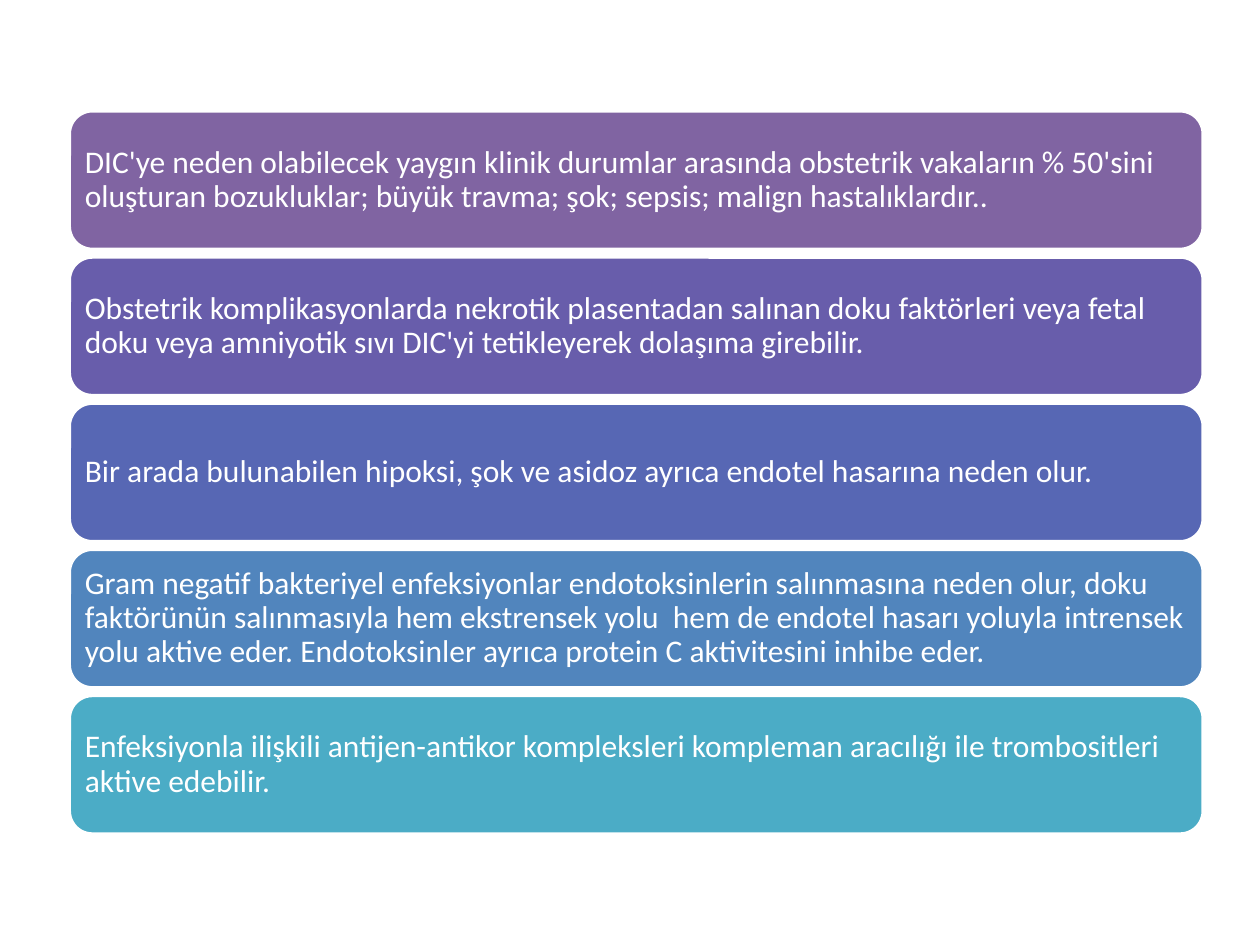
from dataclasses import dataclass

from pptx import Presentation
from pptx.dml.color import RGBColor
from pptx.enum.shapes import MSO_SHAPE
from pptx.enum.text import MSO_ANCHOR, PP_ALIGN
from pptx.util import Inches, Pt


@dataclass(frozen=True)
class Theme:
    font: str = "Calibri"
    text_size: float = 18
    space_after: float = 6.3
    line_spacing: float = 0.9
    outline_width: float = 2
    white: str = "FFFFFF"
    bars: tuple = ("8064A2", "685DAB", "5767B4", "5185BD", "4BACC6")


THEME = Theme()

BAR_LEFT, BAR_TOP = 0.55, 0.88
BAR_WIDTH, BAR_HEIGHT = 9, 1.1
BAR_PITCH = 1.16
BAR_INSET = 0.07

STATEMENTS = (
    "DIC'ye neden olabilecek yaygın klinik durumlar arasında obstetrik vakaların "
    "% 50'sini oluşturan bozukluklar; büyük travma; şok; sepsis; malign hastalıklardır..",
    "Obstetrik komplikasyonlarda nekrotik plasentadan salınan doku faktörleri veya "
    "fetal doku veya amniyotik sıvı DIC'yi tetikleyerek dolaşıma girebilir.",
    "Bir arada bulunabilen hipoksi, şok ve asidoz ayrıca endotel hasarına neden olur.",
    "Gram negatif bakteriyel enfeksiyonlar endotoksinlerin salınmasına neden olur, "
    "doku faktörünün salınmasıyla hem ekstrensek yolu  hem de endotel hasarı yoluyla "
    "intrensek yolu aktive eder. Endotoksinler ayrıca protein C aktivitesini inhibe eder.",
    "Enfeksiyonla ilişkili antijen-antikor kompleksleri kompleman aracılığı ile "
    "trombositleri aktive edebilir.",
)


def color(value):
    return RGBColor.from_string(value)


def add_bar(page, top, fill):
    bar = page.shapes.add_shape(
        MSO_SHAPE.ROUNDED_RECTANGLE,
        Inches(BAR_LEFT), Inches(top), Inches(BAR_WIDTH), Inches(BAR_HEIGHT),
    )
    bar.shadow.inherit = False
    bar.fill.solid()
    bar.fill.fore_color.rgb = color(fill)
    bar.line.color.rgb = color(THEME.white)
    bar.line.width = Pt(THEME.outline_width)
    return bar


def write_statement(bar, text):
    frame = bar.text_frame
    frame.word_wrap = True
    frame.vertical_anchor = MSO_ANCHOR.MIDDLE
    frame.margin_left = frame.margin_right = Inches(BAR_INSET)
    frame.margin_top = frame.margin_bottom = Inches(BAR_INSET)
    para = frame.paragraphs[0]
    para.alignment = PP_ALIGN.LEFT
    para.line_spacing = THEME.line_spacing
    para.space_after = Pt(THEME.space_after)
    span = para.add_run()
    span.text = text
    span.font.name = THEME.font
    span.font.size = Pt(THEME.text_size)
    span.font.color.rgb = color(THEME.white)


def main():
    deck = Presentation()
    deck.slide_width, deck.slide_height = Inches(10), Inches(7.5)
    page = deck.slides.add_slide(deck.slide_layouts.get_by_name("Blank"))
    for row, (text, fill) in enumerate(zip(STATEMENTS, THEME.bars)):
        bar = add_bar(page, BAR_TOP + row * BAR_PITCH, fill)
        write_statement(bar, text)
    deck.save("out.pptx")


if __name__ == "__main__":
    main()
